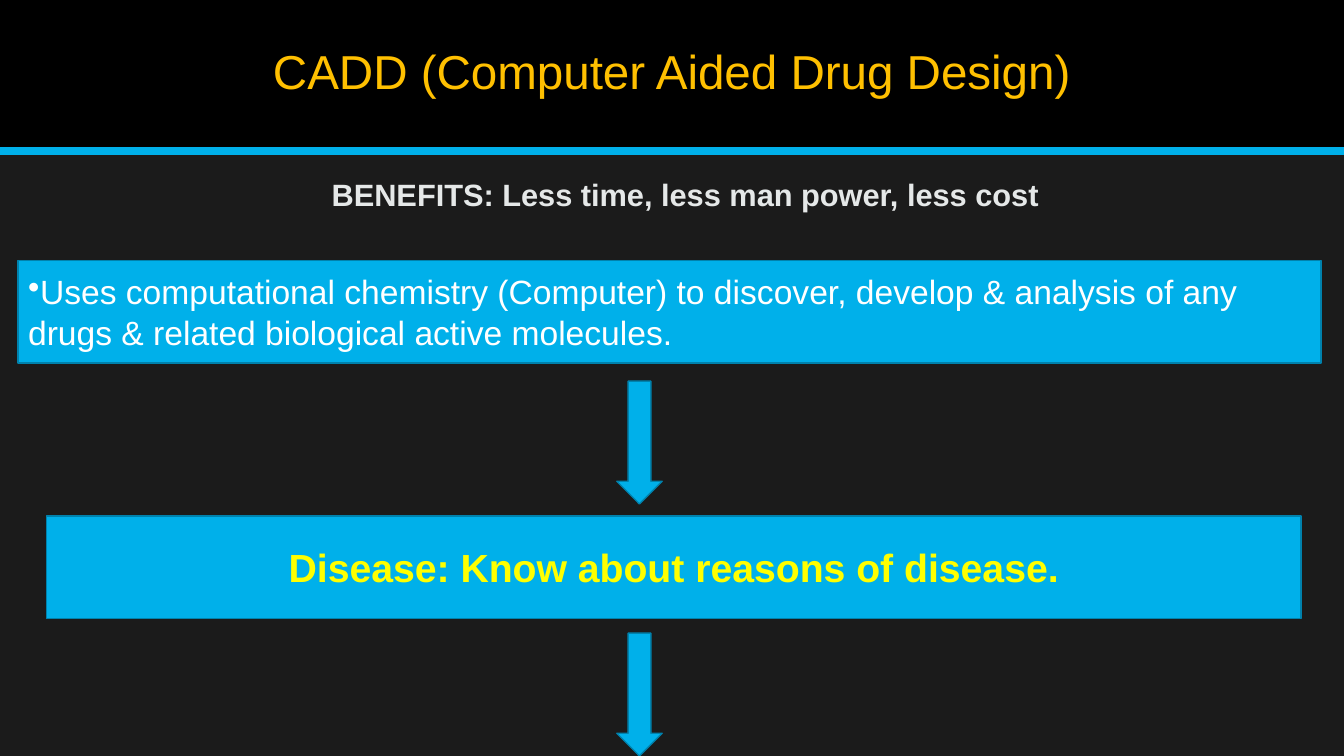
from lxml import etree
from pptx import Presentation
from pptx.dml.color import RGBColor
from pptx.enum import shapes, text
from pptx.oxml import ns
from pptx.util import Pt

BACKGROUND = RGBColor(0x1B, 0x1B, 0x1B)
BLACK = RGBColor(0, 0, 0)
CYAN = RGBColor(0x00, 0xB0, 0xEA)
DARK_CYAN = RGBColor(0x00, 0x82, 0xAD)
GOLD = RGBColor(0xFF, 0xC0, 0x00)
PALE_GREY = RGBColor(0xE5, 0xE8, 0xE8)
WHITE = RGBColor(0xFF, 0xFF, 0xFF)
YELLOW = RGBColor(0xFF, 0xFF, 0x00)

WIDTH, HEIGHT = 960, 540
HEADER_HEIGHT = 108
BOX_HEIGHT = 73.4
ARROW_LEFT, ARROW_WIDTH, ARROW_HEIGHT = 440.6, 32.4, 87.8


def place(shape, left, top, width, height):
    shape.left, shape.top = Pt(left), Pt(top)
    shape.width, shape.height = Pt(width), Pt(height)


def write(shape, wording, size, color, bold=False, align=text.PP_ALIGN.CENTER,
          anchor=text.MSO_ANCHOR.MIDDLE, line_spacing=1.0, space_before=0,
          bullet=None, hanging=0):
    frame = shape.text_frame
    frame.word_wrap = True
    frame.auto_size = text.MSO_AUTO_SIZE.NONE
    frame.vertical_anchor = anchor
    paragraph = frame.paragraphs[0]
    paragraph.alignment = align
    paragraph.line_spacing = line_spacing
    paragraph.space_before = Pt(space_before)
    run = paragraph.add_run()
    run.text = wording
    run.font.name = "Arial"
    run.font.size = Pt(size)
    run.font.bold = bold
    run.font.color.rgb = color
    properties = paragraph._p.get_or_add_pPr()
    properties.set("marL", str(Pt(hanging)))
    properties.set("indent", str(Pt(-hanging)))
    if bullet:
        etree.SubElement(properties, ns.qn("a:buChar"), char=bullet)
    else:
        etree.SubElement(properties, ns.qn("a:buNone"))


def add_block(slide, kind, left, top, width, height, fill=CYAN, outline=DARK_CYAN):
    block = slide.shapes.add_shape(kind, Pt(left), Pt(top), Pt(width), Pt(height))
    block.shadow.inherit = False
    block.fill.solid()
    block.fill.fore_color.rgb = fill
    if outline is None:
        block.line.fill.background()
    else:
        block.line.color.rgb = outline
        block.line.width = Pt(1)
    return block


def add_header(slide, left, top, width, height):
    band = add_block(slide, shapes.MSO_SHAPE.RECTANGLE, left, top, width, height,
                     fill=BLACK, outline=None)
    bottom = Pt(top + height)
    rule = slide.shapes.add_connector(shapes.MSO_CONNECTOR.STRAIGHT,
                                      Pt(left), bottom, Pt(left + width), bottom)
    rule.line.color.rgb = CYAN
    rule.line.width = Pt(6)
    etree.SubElement(rule.element.spPr, ns.qn("a:effectLst"))

    title = slide.shapes.title
    for backdrop in (band, rule):
        title.element.addprevious(backdrop.element)
    place(title, left, top + 10, width, 86.4)
    write(title, "CADD (Computer Aided Drug Design)", 34, GOLD, line_spacing=0.9)


def add_benefits(slide, left, top, width, height):
    body = slide.placeholders[1]
    place(body, left, top, width, height)
    write(body, "BENEFITS: Less time, less man power, less cost", 22, PALE_GREY,
          bold=True, anchor=text.MSO_ANCHOR.TOP, space_before=22, hanging=21.6)


def add_step(slide, left, top, width, arrow_top, wording, **text_format):
    """Add a text box and the arrow that leads down from it."""
    box = add_block(slide, shapes.MSO_SHAPE.RECTANGLE, left, top, width, BOX_HEIGHT)
    write(box, wording, **text_format)
    add_block(slide, shapes.MSO_SHAPE.DOWN_ARROW,
              ARROW_LEFT, arrow_top, ARROW_WIDTH, ARROW_HEIGHT)


def main():
    presentation = Presentation()
    presentation.slide_width, presentation.slide_height = Pt(WIDTH), Pt(HEIGHT)
    slide = presentation.slides.add_slide(presentation.slide_layouts[1])
    slide.background.fill.solid()
    slide.background.fill.fore_color.rgb = BACKGROUND

    add_header(slide, 0, 0, WIDTH, HEADER_HEIGHT)
    add_benefits(slide, 66.2, 121.7, 846.7, 41)
    add_step(slide, 13, 185.9, 930.6, 272.2,
             "Uses computational chemistry (Computer) to discover, develop & "
             "analysis of any drugs & related biological active molecules.",
             size=24, color=WHITE, align=text.PP_ALIGN.LEFT, bullet="•")
    add_step(slide, 33.1, 368.5, 896.2, HEIGHT - ARROW_HEIGHT,
             "Disease: Know about reasons of disease.",
             size=28, color=YELLOW, bold=True)
    presentation.save("out.pptx")


if __name__ == "__main__":
    main()
